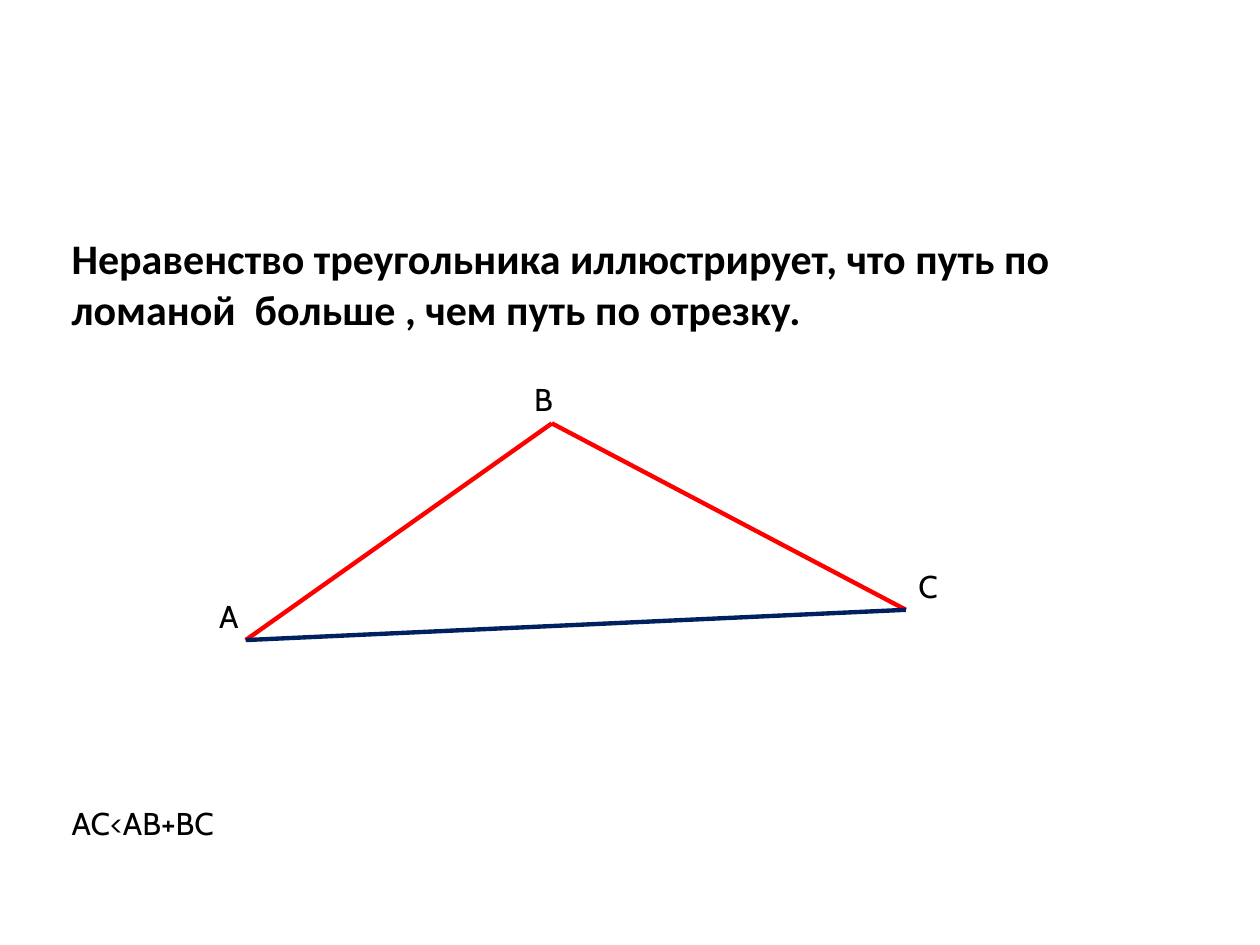
from itertools import combinations

from pptx import Presentation
from pptx.dml.color import RGBColor
from pptx.enum.shapes import MSO_CONNECTOR
from pptx.enum.text import MSO_AUTO_SIZE
from pptx.oxml.ns import qn
from pptx.util import Inches, Pt
from lxml.etree import SubElement

COLORS = {"text": "000000", "path": "FF0000", "base": "002060"}


class Board:
    """Holds the style and the current slide."""

    def __init__(self, slide, font="Cabin", size=18, weight=2.5):
        self.slide = slide
        self.font = font
        self.size = size
        self.weight = weight

    def text(self, words, left, top, width, height=0.4,
             font=None, size=None, bold=False, wrap=True):
        box = self.slide.shapes.add_textbox(
            Inches(left), Inches(top), Inches(width), Inches(height))
        frame = box.text_frame
        frame.word_wrap = wrap
        frame.auto_size = MSO_AUTO_SIZE.SHAPE_TO_FIT_TEXT
        frame.text = words
        style = frame.paragraphs[0].runs[0].font
        style.name = font or self.font
        style.size = Pt(size or self.size)
        style.bold = bold
        style.color.rgb = RGBColor.from_string(COLORS["text"])

    def line(self, group, start, end, color):
        edge = group.shapes.add_connector(
            MSO_CONNECTOR.STRAIGHT, *(Inches(v) for v in (*start, *end)))
        edge.line.color.rgb = RGBColor.from_string(COLORS[color])
        edge.line.width = Pt(self.weight)
        SubElement(edge._element.spPr, qn("a:effectLst"))

    def shape(self, points, base):
        """Join every pair of points; the base side has its own colour."""
        group = self.slide.shapes.add_group_shape()
        sides = sorted(combinations(points, 2), key=lambda side: side == base)
        for a, b in sides:
            self.line(group, points[a], points[b],
                      "base" if (a, b) == base else "path")


def main():
    deck = Presentation()
    deck.slide_width, deck.slide_height = Inches(10), Inches(7.5)
    board = Board(deck.slides.add_slide(deck.slide_layouts[6]))

    # Statement
    board.text("Неравенство треугольника иллюстрирует, что путь по "
               "ломаной  больше , чем путь по отрезку.",
               0.47, 1.8, 9.14, 0.9, font="Calibri", size=24, bold=True)

    # Triangle
    points = {"A": (1.95, 5.08), "B": (4.38, 3.36), "C": (7.19, 4.84)}
    board.shape(points, base=("A", "C"))

    # Corner names
    board.text("A", 1.64, 4.69, 0.37, wrap=False)
    board.text("B", 4.14, 2.97, 0.39)
    board.text("C", 7.19, 4.45, 0.39)

    # Inequality
    board.text("AC<AB+BC", 0.47, 6.33, 8.75)

    deck.save("out.pptx")


if __name__ == "__main__":
    main()
